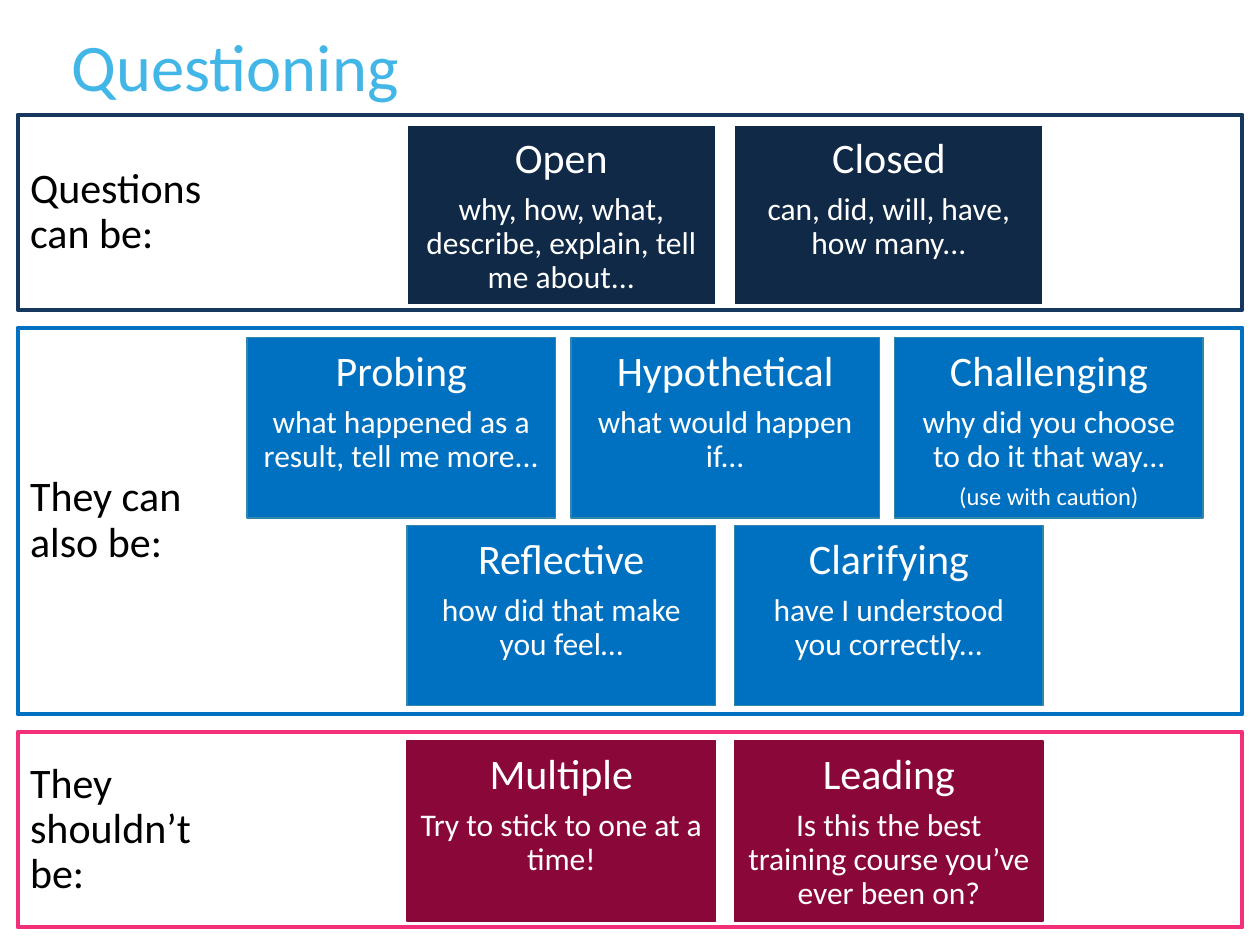
import dataclasses

import pptx
import pptx.dml.color
import pptx.enum.shapes
import pptx.enum.text
import pptx.util

Inches = pptx.util.Inches
Pt = pptx.util.Pt
ALIGN = pptx.enum.text.PP_ALIGN
ANCHOR = pptx.enum.text.MSO_ANCHOR


@dataclasses.dataclass(frozen=True)
class Theme:
    """Colours, type sizes and font of the slide."""
    font: str = "Calibri"
    title: str = "42B6E6"
    black: str = "000000"
    white: str = "FFFFFF"
    navy: str = "102946"
    navy_line: str = "16385E"
    blue: str = "0070C0"
    blue_line: str = "3087AA"
    wine: str = "890839"
    pink: str = "F32F79"
    title_size: int = 38
    card_sizes: tuple = (24, 18, 14)


THEME = Theme()
BAND_LEFT, BAND_W = 0.14, 9.72
CARD_W, CARD_H = 2.45, 1.43
PAIR_LEFT, PAIR_STEP = 3.23, 2.6
TRIO_LEFT, TRIO_STEP = 1.96, 2.57

BANDS = [
    ("Questions can be:", 0.91, 1.55, THEME.navy_line),
    ("They can also be:", 2.6, 3.07, THEME.blue),
    ("They shouldn’t be:", 5.81, 1.55, THEME.pink),
]

CARD_ROWS = [
    (PAIR_LEFT, PAIR_STEP, 0.99, THEME.navy, THEME.white, [
        ("Open", "why, how, what, describe, explain, tell me about..."),
        ("Closed", "can, did, will, have, how many..."),
    ]),
    (TRIO_LEFT, TRIO_STEP, 2.68, THEME.blue, THEME.blue_line, [
        ("Probing", "what happened as a result, tell me more..."),
        ("Hypothetical", "what would happen if..."),
        ("Challenging", "why did you choose to do it that way…", "(use with caution)"),
    ]),
    (PAIR_LEFT, PAIR_STEP, 4.17, THEME.blue, THEME.blue_line, [
        ("Reflective", "how did that make you feel…"),
        ("Clarifying", "have I understood you correctly..."),
    ]),
    (PAIR_LEFT, PAIR_STEP, 5.88, THEME.wine, THEME.wine, [
        ("Multiple", "Try to stick to one at a time!"),
        ("Leading", "Is this the best training course you’ve ever been on?"),
    ]),
]


def rgb(value):
    """Return a colour from its hex value."""
    return pptx.dml.color.RGBColor.from_string(value)


def format_paragraph(p, size, color, align):
    """Set the spacing, alignment and font of a paragraph."""
    p.alignment = align
    p.line_spacing = 0.9
    for r in p.runs:
        r.font.name = THEME.font
        r.font.size = Pt(size)
        r.font.color.rgb = rgb(color)


def set_margins(tf, right=0.1):
    """Set the text margins, with room kept free on the right."""
    tf.word_wrap = True
    tf.margin_left = tf.margin_top = tf.margin_bottom = Inches(0.1)
    tf.margin_right = Inches(right)


def add_box(slide, left, top, width, height, fill, line, weight):
    """Add a filled and outlined rectangle."""
    sp = slide.shapes.add_shape(
        pptx.enum.shapes.MSO_SHAPE.RECTANGLE,
        Inches(left), Inches(top), Inches(width), Inches(height))
    sp.shadow.inherit = False
    sp.fill.solid()
    sp.fill.fore_color.rgb = rgb(fill)
    sp.line.color.rgb = rgb(line)
    sp.line.width = Pt(weight)
    return sp


def add_title(slide, text):
    """Place and format the title."""
    sp = slide.shapes.title
    sp.left, sp.top = Inches(0.47), Inches(0.22)
    sp.width, sp.height = Inches(9.06), Inches(1.03)
    tf = sp.text_frame
    tf.text = text
    tf.auto_size = pptx.enum.text.MSO_AUTO_SIZE.NONE
    tf.vertical_anchor = ANCHOR.TOP
    format_paragraph(tf.paragraphs[0], THEME.title_size, THEME.title, ALIGN.LEFT)


def add_band(slide, label, top, height, line):
    """Add an outlined band with its label at the left."""
    sp = add_box(slide, BAND_LEFT, top, BAND_W, height, THEME.white, line, 2.25)
    tf = sp.text_frame
    set_margins(tf, right=8.19)
    tf.vertical_anchor = ANCHOR.MIDDLE
    tf.text = label
    p = tf.paragraphs[0]
    format_paragraph(p, THEME.card_sizes[0], THEME.black, ALIGN.LEFT)
    p.space_after = Pt(6)


def add_card(slide, left, top, fill, line, texts):
    """Add a card with a heading and the lines under it."""
    sp = add_box(slide, left, top, CARD_W, CARD_H, fill, line, 1)
    tf = sp.text_frame
    set_margins(tf)
    tf.vertical_anchor = ANCHOR.TOP
    tf.text = "\n".join(texts)
    for p, size in zip(tf.paragraphs, THEME.card_sizes):
        format_paragraph(p, size, THEME.white, ALIGN.CENTER)
        p.space_after = Pt(6)


def main():
    """Build the slide and save it."""
    prs = pptx.Presentation()
    prs.slide_width, prs.slide_height = Inches(10), Inches(7.5)
    slide = prs.slides.add_slide(prs.slide_layouts[5])
    add_title(slide, "Questioning")
    for band in BANDS:
        add_band(slide, *band)
    for left, step, top, fill, line, cards in CARD_ROWS:
        for i, texts in enumerate(cards):
            add_card(slide, left + i * step, top, fill, line, texts)
    prs.save("out.pptx")


if __name__ == "__main__":
    main()
